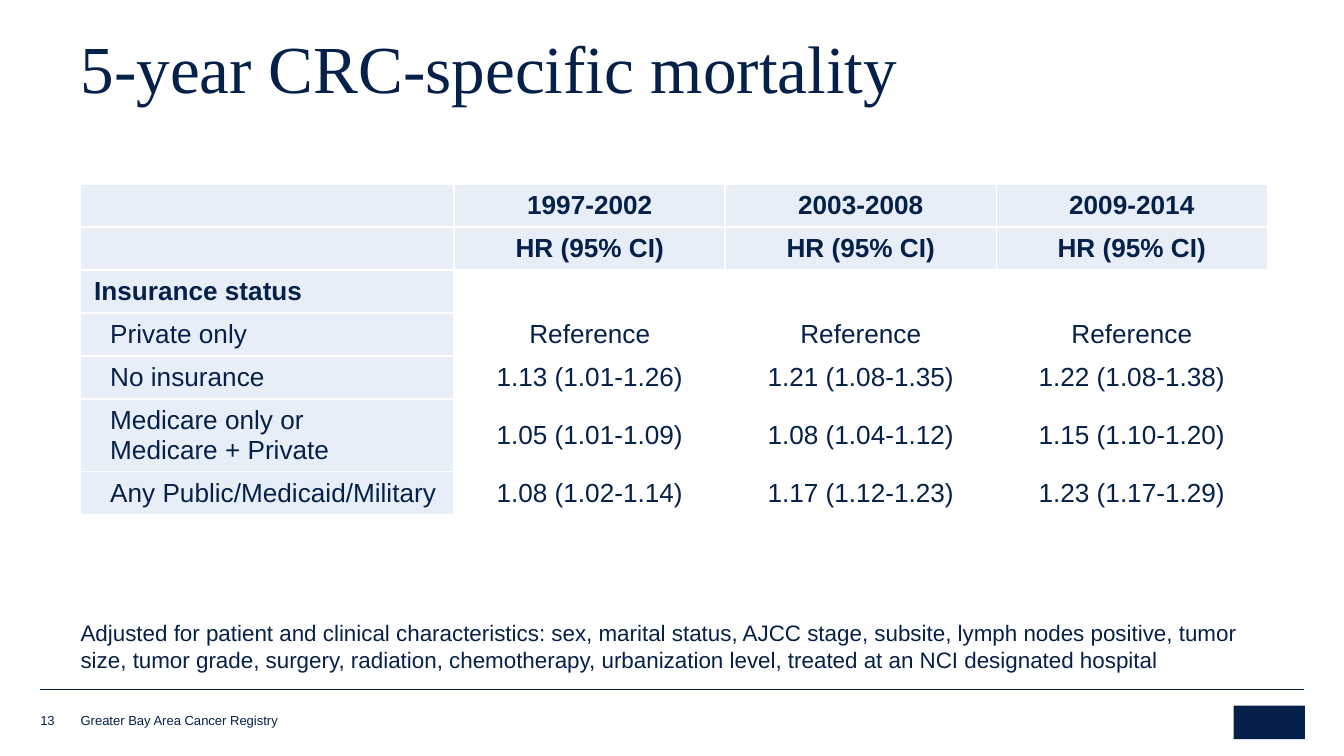
import pptx
import pptx.dml.color
import pptx.enum.shapes
import pptx.enum.text
import pptx.oxml
import pptx.oxml.ns
import pptx.util
from pptx.util import Inches

NAVY = "052049"
PALE = "E7EEF7"
WHITE = "FFFFFF"
ANCHOR = pptx.enum.text.MSO_ANCHOR
ALIGN = pptx.enum.text.PP_ALIGN

ROWS = [
    ["", "1997-2002", "2003-2008", "2009-2014"],
    [""] + ["HR (95% CI)"] * 3,
    ["Insurance status", "", "", ""],
    ["Private only"] + ["Reference"] * 3,
    ["No insurance", "1.13 (1.01-1.26)", "1.21 (1.08-1.35)", "1.22 (1.08-1.38)"],
    ["Medicare only or\nMedicare + Private",
     "1.05 (1.01-1.09)", "1.08 (1.04-1.12)", "1.15 (1.10-1.20)"],
    ["Any Public/Medicaid/Military",
     "1.08 (1.02-1.14)", "1.17 (1.12-1.23)", "1.23 (1.17-1.29)"],
]
HEADING_ROWS = 3
NOTE = ("Adjusted for patient and clinical characteristics: sex, marital status, "
        "AJCC stage, subsite, lymph nodes positive, tumor size, tumor grade, surgery, "
        "radiation, chemotherapy, urbanization level, treated at an NCI designated hospital")


def color(value):
    return pptx.dml.color.RGBColor.from_string(value)


def format_paragraph(paragraph, size, name="Arial", bold=False):
    paragraph.font.size = pptx.util.Pt(size)
    paragraph.font.name = name
    paragraph.font.bold = bold
    paragraph.font.color.rgb = color(NAVY)


def add_text(slide, text, box, size, anchor=ANCHOR.TOP):
    shape = slide.shapes.add_textbox(*map(Inches, box))
    frame = shape.text_frame
    frame.word_wrap = True
    frame.vertical_anchor = anchor
    frame.margin_left = frame.margin_right = 0
    frame.margin_top = frame.margin_bottom = 0
    frame.text = text
    format_paragraph(frame.paragraphs[0], size)


def place_title(slide, text, box):
    title = slide.shapes.title
    title.left, title.top, title.width, title.height = map(Inches, box)
    frame = title.text_frame
    frame.text = text
    frame.vertical_anchor = ANCHOR.BOTTOM
    frame.auto_size = pptx.enum.text.MSO_AUTO_SIZE.NONE
    paragraph = frame.paragraphs[0]
    paragraph.alignment = ALIGN.LEFT
    paragraph.line_spacing = 0.85
    format_paragraph(paragraph, 36, "Times New Roman")


def set_borders(cell):
    properties = cell._tc.get_or_add_tcPr()
    for index, side in enumerate(("lnL", "lnR", "lnT", "lnB")):
        properties.insert(index, pptx.oxml.parse_xml(
            f'<a:{side} {pptx.oxml.ns.nsdecls("a")} w="12700"><a:solidFill>'
            f'<a:srgbClr val="{WHITE}"/></a:solidFill></a:{side}>'))


def fill_cell(cell, text, row, column):
    cell.text = text
    cell.vertical_anchor = ANCHOR.MIDDLE
    cell.margin_top = cell.margin_bottom = Inches(0.03)
    if column == 0 or row < 2:
        cell.fill.solid()
        cell.fill.fore_color.rgb = color(PALE)
    else:
        cell.fill.background()
    set_borders(cell)
    for paragraph in cell.text_frame.paragraphs:
        paragraph.alignment = ALIGN.CENTER if column else ALIGN.LEFT
        if column == 0 and row >= HEADING_ROWS:
            paragraph.level = 1
            paragraph._p.get_or_add_pPr().set("marL", str(Inches(0.12)))
        format_paragraph(paragraph, 14, bold=row < HEADING_ROWS)


def add_hazard_table(slide, box):
    left, top, width, height = box
    table = slide.shapes.add_table(len(ROWS), len(ROWS[0]), *map(Inches, box)).table
    table.first_row = False
    table.horz_banding = False
    label_width = 2.78
    for index, column in enumerate(table.columns):
        share = (width - label_width) / (len(ROWS[0]) - 1)
        column.width = Inches(share if index else label_width)
    line_height = 0.22
    extra_lines = [row[0].count("\n") for row in ROWS]
    row_height = (height - line_height * sum(extra_lines)) / len(ROWS)
    for row, values in enumerate(ROWS):
        table.rows[row].height = Inches(row_height + line_height * extra_lines[row])
        for column, text in enumerate(values):
            fill_cell(table.cell(row, column), text, row, column)


def add_footer(slide, box):
    left, top, width, height = box
    rule = slide.shapes.add_connector(
        pptx.enum.shapes.MSO_CONNECTOR.STRAIGHT,
        *map(Inches, (left, top, left + width, top)))
    rule.line.color.rgb = color(NAVY)
    rule.line.width = pptx.util.Pt(0.25)
    rule._element.spPr.append(pptx.oxml.parse_xml(
        f'<a:effectLst {pptx.oxml.ns.nsdecls("a")}/>'))
    add_text(slide, "13", (left, top + 0.16, 0.27, 0.13), 7, ANCHOR.BOTTOM)
    add_text(slide, "Greater Bay Area Cancer Registry",
             (left + 0.3, top + 0.18, 4.71, 0.11), 7, ANCHOR.BOTTOM)
    mark = slide.shapes.add_shape(
        pptx.enum.shapes.MSO_SHAPE.RECTANGLE,
        *map(Inches, (left + width - 0.52, top + 0.12, 0.53, 0.25)))
    mark.shadow.inherit = False
    mark.fill.solid()
    mark.fill.fore_color.rgb = color(NAVY)
    mark.line.fill.background()


def main():
    presentation = pptx.Presentation()
    presentation.slide_width = Inches(10)
    presentation.slide_height = presentation.slide_width * 9 // 16
    slide = presentation.slides.add_slide(presentation.slide_layouts[5])
    add_footer(slide, (0.3, 5.13, 9.4, 0.49))
    place_title(slide, "5-year CRC-specific mortality", (0.5, 0.35, 8.94, 0.5))
    add_hazard_table(slide, (0.6, 1.37, 8.83, 2.46))
    add_text(slide, NOTE, (0.6, 4.61, 8.83, 0.4), 12)
    presentation.save("out.pptx")


if __name__ == "__main__":
    main()
